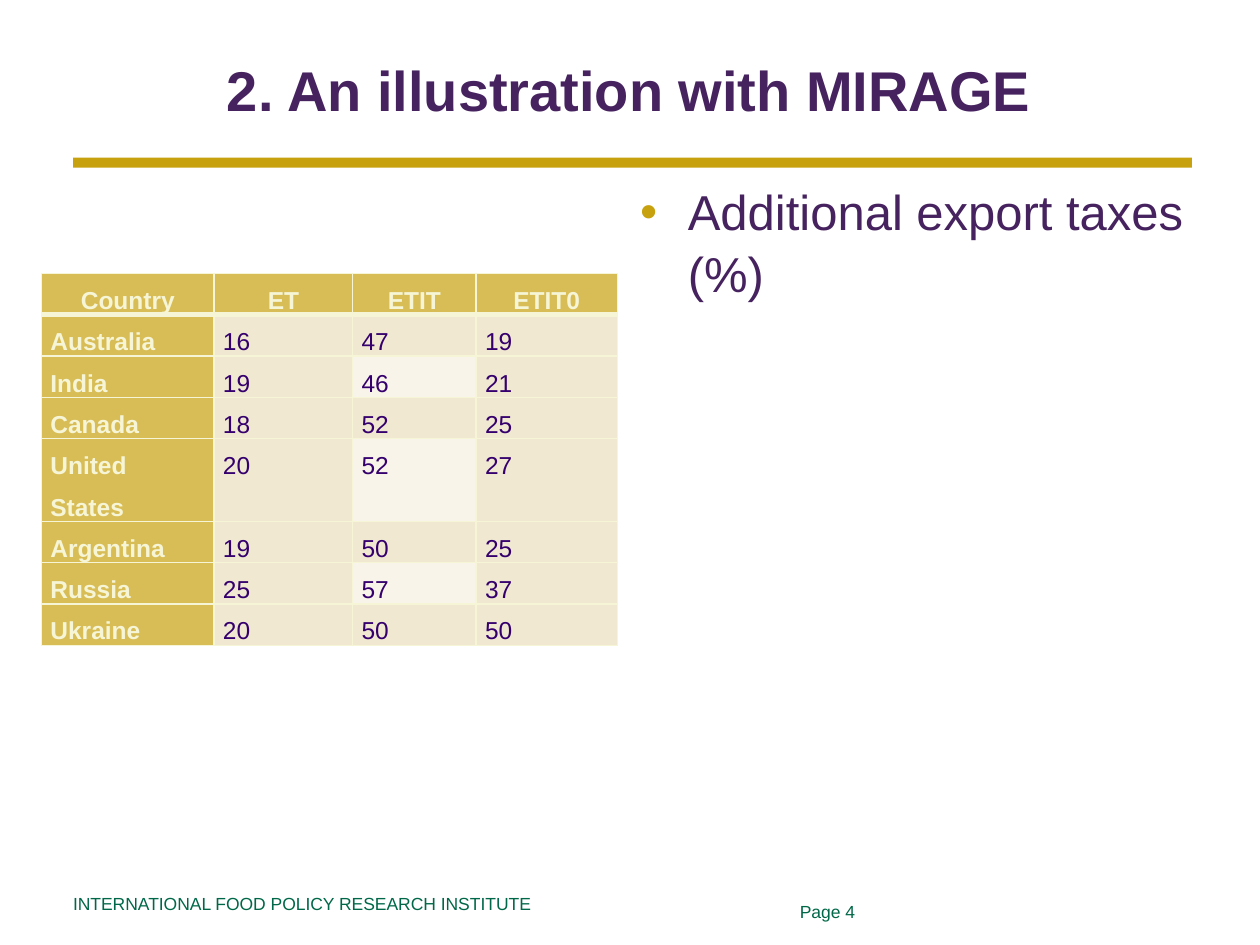
from lxml.etree import SubElement
from pptx import Presentation
from pptx.dml.color import RGBColor
from pptx.enum.shapes import MSO_SHAPE
from pptx.enum.text import MSO_ANCHOR, PP_ALIGN
from pptx.oxml import parse_xml
from pptx.oxml.ns import nsdecls, qn
from pptx.util import Inches, Pt

PURPLE, GOLD, GREEN, CREAM = "46235F", "C7A10E", "006848", "F6F5D6"
LABEL_FILL, VALUE_FILL, LIGHT_FILL = "D8BD56", "F0E8D1", "F8F4E9"
VALUE_TEXT = "35006D"

EXPORT_TAXES = [
    ("Country", "ET", "ETIT", "ETIT0"),
    ("Australia", 16, 47, 19),
    ("India", 19, 46, 21),
    ("Canada", 18, 52, 25),
    ("United States", 20, 52, 27),
    ("Argentina", 19, 50, 25),
    ("Russia", 25, 57, 37),
    ("Ukraine", 20, 50, 50),
]
COLUMN_WIDTHS = (1.37, 1.1, 0.98, 1.12)
ROW_HEIGHT = 0.26


def rgb(color):
    return RGBColor.from_string(color)


def set_margins(target, left, top, right, bottom):
    margins = {"left": left, "top": top, "right": right, "bottom": bottom}
    for side, inches in margins.items():
        setattr(target, f"margin_{side}", Inches(inches))


def write(frame, text, size, color, bold=False, align=PP_ALIGN.LEFT):
    """Fill the first paragraph of a text frame and format it."""
    paragraph = frame.paragraphs[0]
    paragraph.text = text
    paragraph.alignment = align
    font = paragraph.runs[0].font
    for name, value in {"name": "Arial", "size": Pt(size), "bold": bold}.items():
        setattr(font, name, value)
    font.color.rgb = rgb(color)
    return paragraph


def add_title(slide, text):
    title = slide.shapes.title
    place = {"left": 0.58, "top": 0.39, "width": 8.83, "height": 0.63}
    for name, inches in place.items():
        setattr(title, name, Inches(inches))
    frame = title.text_frame
    frame.vertical_anchor = MSO_ANCHOR.MIDDLE
    set_margins(frame, 0, 0.05, 0, 0.05)
    write(frame, text, 32, PURPLE, bold=True, align=PP_ALIGN.CENTER)


def add_rule(slide):
    rule = slide.shapes.add_shape(
        MSO_SHAPE.RECTANGLE, Inches(0.58), Inches(1.25), Inches(8.88), Inches(0.08))
    rule.shadow.inherit = False
    rule.fill.solid()
    rule.fill.fore_color.rgb = rgb(GOLD)
    rule.line.fill.background()


def add_text(slide, place, margins, text, size, color):
    box = slide.shapes.add_textbox(*map(Inches, place))
    frame = box.text_frame
    frame.word_wrap = True
    set_margins(frame, *margins)
    return write(frame, text, size, color)


def add_bullet(paragraph, indent, color):
    properties = paragraph._p.get_or_add_pPr()
    properties.set("marL", str(Inches(indent)))
    properties.set("indent", str(-Inches(indent)))
    bullet_color = SubElement(properties, qn("a:buClr"))
    SubElement(bullet_color, qn("a:srgbClr"), val=color)
    SubElement(properties, qn("a:buFont"), typeface="Arial")
    SubElement(properties, qn("a:buChar"), char="•")


def set_borders(cell, color, widths):
    """Draw cell borders; widths maps L, R, T, B to points, in that order."""
    properties = cell._tc.get_or_add_tcPr()
    for position, (side, width) in enumerate(widths.items()):
        properties.insert(position, parse_xml(
            f'<a:ln{side} {nsdecls("a")} w="{Pt(width)}"><a:solidFill>'
            f'<a:srgbClr val="{color}"/></a:solidFill></a:ln{side}>'))


def cell_fill(row, column):
    if row == 0 or column == 0:
        return LABEL_FILL
    # Every second country is lighter in the ETIT column
    return LIGHT_FILL if column == 2 and row % 2 == 0 else VALUE_FILL


def format_cell(cell, row, column, value):
    is_label = row == 0 or column == 0
    set_margins(cell, 0.07, 0, 0.07, 0)
    paragraph = write(
        cell.text_frame, str(value), 14, CREAM if is_label else VALUE_TEXT,
        bold=is_label, align=PP_ALIGN.CENTER if row == 0 else PP_ALIGN.LEFT)
    paragraph.line_spacing = 1.5
    cell.fill.solid()
    cell.fill.fore_color.rgb = rgb(cell_fill(row, column))
    set_borders(cell, CREAM, {"L": 1, "R": 1, "T": 3 if row == 1 else 1,
                              "B": 3 if row == 0 else 1})


def add_tax_table(slide):
    row_count = len(EXPORT_TAXES)
    table = slide.shapes.add_table(
        row_count, len(COLUMN_WIDTHS), Inches(0.33), Inches(2.17),
        Inches(sum(COLUMN_WIDTHS)), Inches(ROW_HEIGHT * row_count)).table
    table.horz_banding = False
    for column, width in zip(table.columns, COLUMN_WIDTHS):
        column.width = Inches(width)
    for row, values in enumerate(EXPORT_TAXES):
        table.rows[row].height = Inches(ROW_HEIGHT)
        for column, value in enumerate(values):
            format_cell(table.cell(row, column), row, column, value)


def main():
    deck = Presentation()
    deck.slide_width, deck.slide_height = Inches(10), Inches(7.5)
    slide = deck.slides.add_slide(deck.slide_layouts[5])

    # Heading
    add_rule(slide)
    add_title(slide, "2. An illustration with MIRAGE")

    # Content
    add_tax_table(slide)
    caption = add_text(slide, (5.08, 1.33, 4.33, 5.08), (0, 0.09, 0, 0.05),
                       "Additional export taxes (%)", 28, PURPLE)
    caption.line_spacing = 1.05
    add_bullet(caption, 0.38, GOLD)

    # Footer
    add_text(slide, (0.58, 7.08, 6.67, 0.23), (0, 0.01, 0.1, 0.05),
             "INTERNATIONAL FOOD POLICY RESEARCH INSTITUTE", 10, GREEN)
    add_text(slide, (6.25, 7.08, 3.17, 0.5), (0.1, 0.07, 0.1, 0.05),
             "Page 4", 10, GREEN)

    deck.save("out.pptx")


if __name__ == "__main__":
    main()
